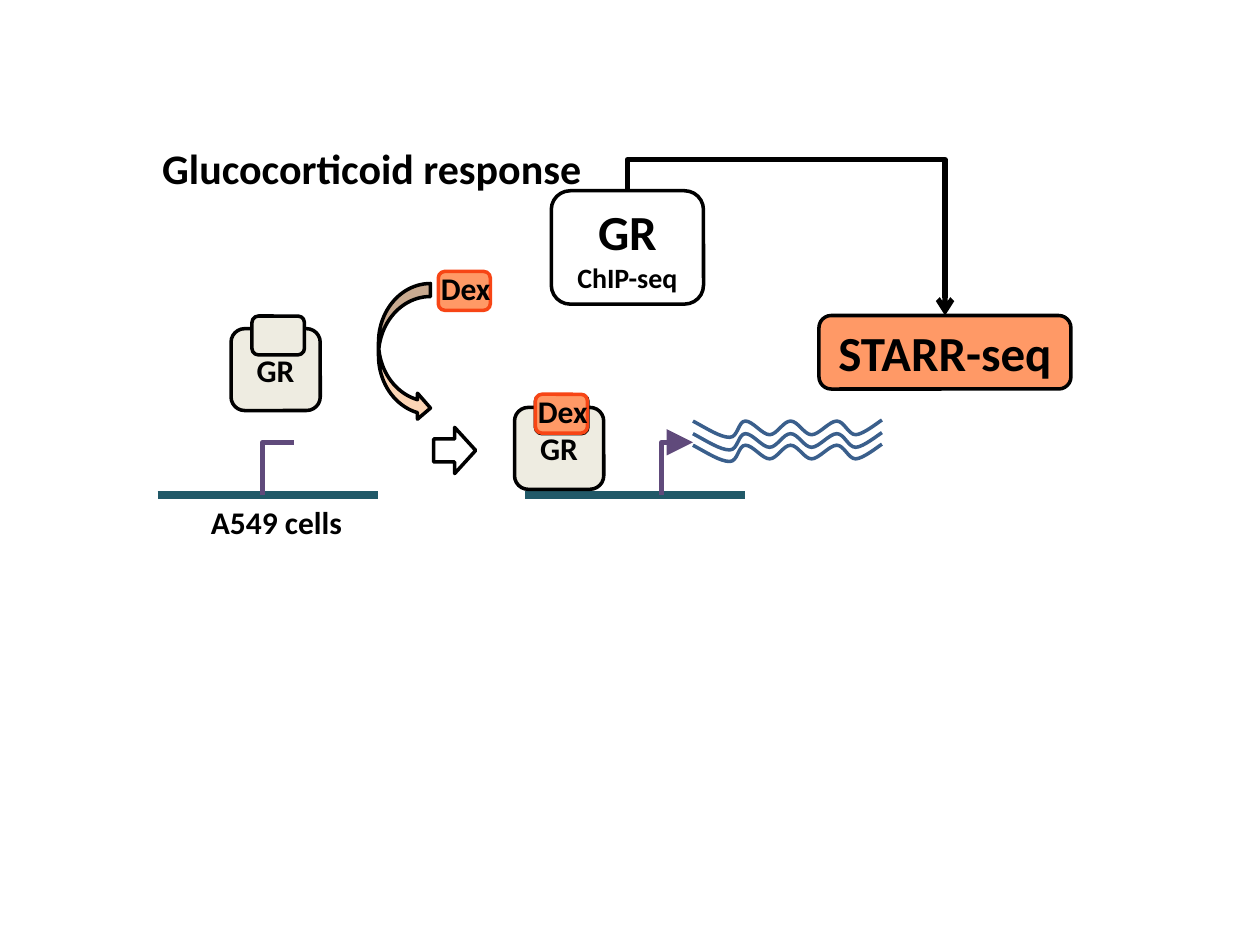
"""Build a slide showing the glucocorticoid response workflow."""
from lxml import etree
from pptx import Presentation
from pptx.dml.color import RGBColor
from pptx.enum.shapes import MSO_CONNECTOR, MSO_SHAPE
from pptx.enum.text import MSO_ANCHOR, MSO_AUTO_SIZE, PP_ALIGN
from pptx.oxml.ns import qn
from pptx.util import Inches, Pt

STRAIGHT, ELBOW = MSO_CONNECTOR.STRAIGHT, MSO_CONNECTOR.ELBOW
ROUNDED, RIGHT_ARROW = MSO_SHAPE.ROUNDED_RECTANGLE, MSO_SHAPE.RIGHT_ARROW
CURVED_ARROW = MSO_SHAPE.CURVED_RIGHT_ARROW
LEFT, CENTER = PP_ALIGN.LEFT, PP_ALIGN.CENTER
TOP, MIDDLE = MSO_ANCHOR.TOP, MSO_ANCHOR.MIDDLE
FIT_SHAPE = MSO_AUTO_SIZE.SHAPE_TO_FIT_TEXT

BLACK = RGBColor(0x00, 0x00, 0x00)
WHITE = RGBColor(0xFF, 0xFF, 0xFF)
ORANGE = RGBColor(0xFF, 0x99, 0x66)
RED = RGBColor(0xF7, 0x45, 0x15)
PEACH = RGBColor(0xFC, 0xD5, 0xB5)
STONE = RGBColor(0xEE, 0xEC, 0xE1)
TEAL = RGBColor(0x21, 0x59, 0x68)
PURPLE = RGBColor(0x60, 0x4A, 0x7B)
BLUE = RGBColor(0x3A, 0x5F, 0x8C)

COLUMNS, ROWS = 120, 90
CELL = Inches(10) / COLUMNS
FONT = {"name": "Calibri", "bold": True}
OPEN_HEAD = {"type": "arrow"}
LARGE_HEAD = {"type": "triangle", "w": "lg", "len": "lg"}
WAVE = [
    (1.3, 0.7), (2.6, 1.55), (3.5, 1.55),
    (4.3, 1.55), (4.3, 0), (5, 0),
    (5.7, 0), (6.6, 1.3), (7.3, 1.3),
    (8, 1.3), (8.6, 0), (9.3, 0),
    (10, 0), (10.6, 1.3), (11.3, 1.3),
    (12, 1.3), (13, 0), (13.7, 0),
    (14.4, 0), (14.8, 1.3), (15.5, 1.3),
    (16.2, 1.3), (17.8, 0), (18, -0.1),
]


def cells(*counts):
    """Turn counts of grid cells into slide lengths."""
    return [round(count * CELL) for count in counts]


def style_line(line, color, width):
    """Set the colour and the width of a line."""
    line.color.rgb = color
    line.width = Pt(width)


def write(frame, lines, align=CENTER, anchor=MIDDLE, wrap=True):
    """Write lines of (text, size) into a text frame."""
    frame.word_wrap = wrap
    frame.vertical_anchor = anchor
    for index, (text, size) in enumerate(lines):
        para = frame.paragraphs[0] if index == 0 else frame.add_paragraph()
        para.alignment = align
        span = para.add_run()
        span.text = text
        for name, value in {**FONT, "size": Pt(size)}.items():
            setattr(span.font, name, value)
        span.font.color.rgb = BLACK


def add_box(shapes, kind, place, fill=None, line=BLACK, lines=()):
    """Add an outlined preset shape with optional text."""
    box = shapes.add_shape(kind, *cells(*place))
    box.shadow.inherit = False
    if fill is None:
        box.fill.background()
    else:
        box.fill.solid()
        box.fill.fore_color.rgb = fill
    style_line(box.line, line, 2)
    if lines:
        write(box.text_frame, lines)


def add_label(shapes, place, text, size, align=LEFT):
    """Add a one-line text box."""
    box = shapes.add_textbox(*cells(*place))
    write(box.text_frame, [(text, size)], align, TOP, False)
    box.text_frame.auto_size = FIT_SHAPE


def add_line(shapes, kind, start, end, color, width, head=None):
    """Add a connector with an optional arrowhead."""
    line = shapes.add_connector(kind, *cells(*start, *end))
    style_line(line.line, color, width)
    properties = line._element.spPr
    if head:
        etree.SubElement(properties.find(qn("a:ln")), qn("a:tailEnd"), head)
    etree.SubElement(properties, qn("a:effectLst"))
    return properties


def add_rising_elbow(shapes, start, end, bend, color, head=None):
    """Add an elbow that leaves its start upwards."""
    middle_x, middle_y = (start[0] + end[0]) / 2, (start[1] + end[1]) / 2
    half_rise, half_run = (start[1] - end[1]) / 2, (end[0] - start[0]) / 2
    properties = add_line(
        shapes, ELBOW,
        (middle_x - half_rise, middle_y - half_run),
        (middle_x + half_rise, middle_y + half_run),
        color, 3, head)
    properties.find(qn("a:xfrm")).set("rot", str(270 * 60000))
    guides = properties.find(qn("a:prstGeom")).get_or_add_avLst()
    etree.SubElement(guides, qn("a:gd"), name="adj1",
                     fmla=f"val {round(bend * 100000)}")


def add_promoter(page, left, offset, head=None):
    """Add a DNA strand with its transcription start mark."""
    shapes = page.shapes.add_group_shape().shapes
    row, start = 47.12, left + offset
    add_line(shapes, STRAIGHT, (left, row), (left + 21, row), TEAL, 4.5)
    add_rising_elbow(shapes, (start, row), (start + 3, row - 5), 1, PURPLE, head)


def add_receptor(page, left, top):
    """Add the receptor with its binding pocket."""
    shapes = page.shapes.add_group_shape().shapes
    add_box(shapes, ROUNDED, (left, top, 8.5, 7.8), STONE, lines=[("GR", 18)])
    add_box(shapes, ROUNDED, (left + 2, top - 1.2, 5, 3.7), STONE)


def add_ligand(page, left, top):
    """Add the labelled ligand."""
    shapes = page.shapes.add_group_shape().shapes
    add_box(shapes, ROUNDED, (left, top, 4.95, 3.7), ORANGE, RED)
    add_label(shapes, (left - 1, top - 0.84, 7.2, 4.8), "Dex", 18, CENTER)


def add_transcript(page, left, top):
    """Add one wavy transcript made of cubic curves."""
    points = [cells(left + x, top + y) for x, y in WAVE]
    builder = page.shapes.build_freeform(*cells(left, top))
    builder.add_line_segments(points, close=False)
    wave = builder.convert_to_shape()
    wave.shadow.inherit = False
    wave.fill.background()
    style_line(wave.line, BLUE, 2)
    outline = next(wave._element.iter(qn("a:path")))
    segments = outline.findall(qn("a:lnTo"))
    for index in range(0, len(segments), 3):
        curve = etree.SubElement(outline, qn("a:cubicBezTo"))
        for segment in segments[index:index + 3]:
            curve.append(segment[0])
            outline.remove(segment)


def add_title(page, place, text):
    """Place and fill the title."""
    title = page.shapes.title
    title.left, title.top, title.width, title.height = cells(*place)
    write(title.text_frame, [(text, 24)], LEFT, TOP, False)
    title.text_frame.auto_size = FIT_SHAPE


def main():
    """Build and save the deck."""
    deck = Presentation()
    deck.slide_width, deck.slide_height = cells(COLUMNS, ROWS)
    page = deck.slides.add_slide(deck.slide_layouts[5])
    shapes = page.shapes
    add_title(page, (14.25, 13, 42.7, 6), "Glucocorticoid response")
    add_box(shapes, RIGHT_ARROW, (41.3, 40.7, 4, 4.4))
    add_label(shapes, (18.9, 47.3, 15, 4.8), "A549 cells", 18)
    add_box(shapes, ROUNDED, (52.5, 18.17, 14.5, 10.8), WHITE,
            lines=[("GR", 28), ("ChIP-seq", 16)])
    add_box(shapes, ROUNDED, (78, 30.05, 24, 7), ORANGE, lines=[("STARR-seq", 28)])
    add_rising_elbow(shapes, (59.75, 18.17), (90, 30.05), -0.25, BLACK, OPEN_HEAD)
    add_promoter(page, 15, 10)
    add_receptor(page, 22, 31.3)
    add_ligand(page, 41.75, 25.85)
    add_promoter(page, 50, 13, LARGE_HEAD)
    add_receptor(page, 49, 38.8)
    add_ligand(page, 51, 37.55)
    add_box(shapes, CURVED_ARROW, (36.05, 27, 4.95, 13.1), PEACH)
    for top in (41.3, 42.4, 40.1):
        add_transcript(page, 66, top)
    deck.save("out.pptx")


if __name__ == "__main__":
    main()
